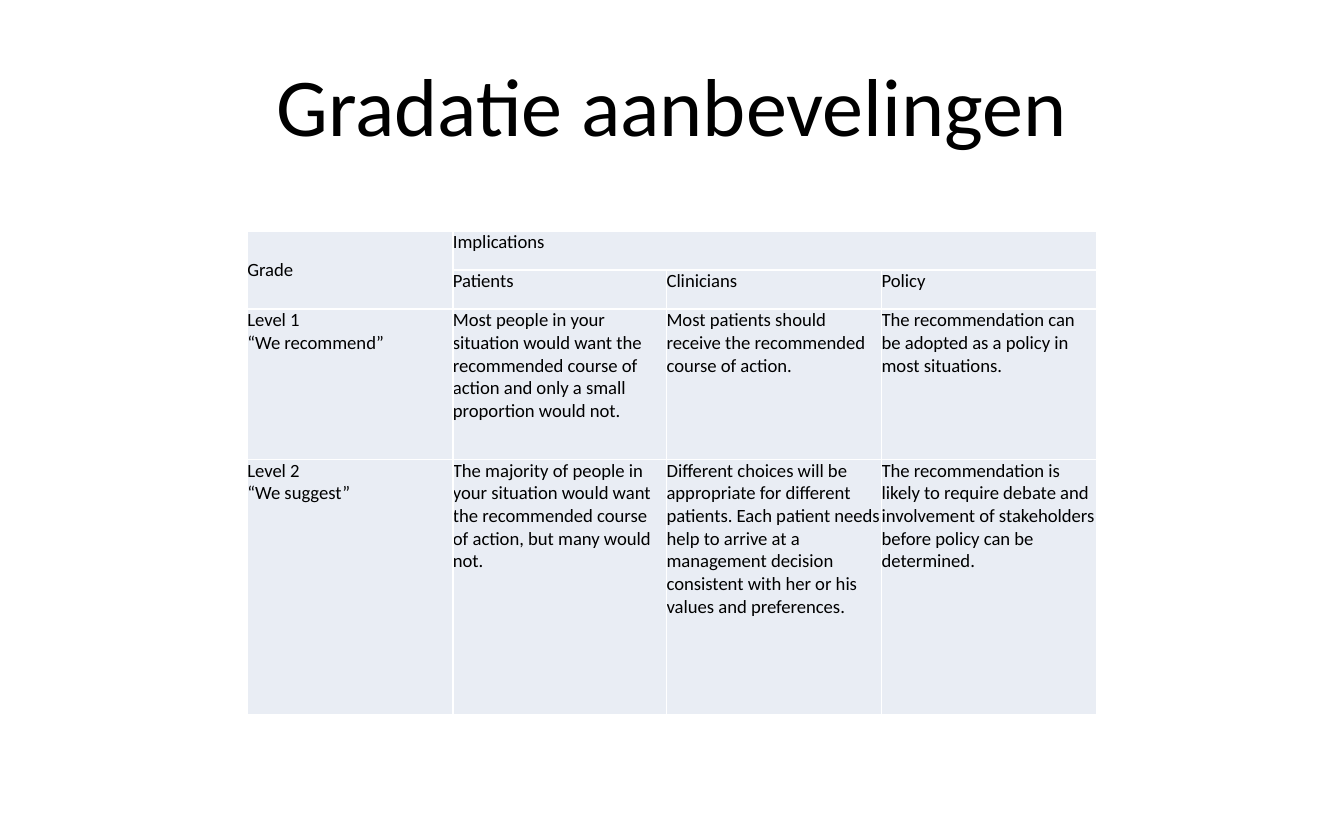
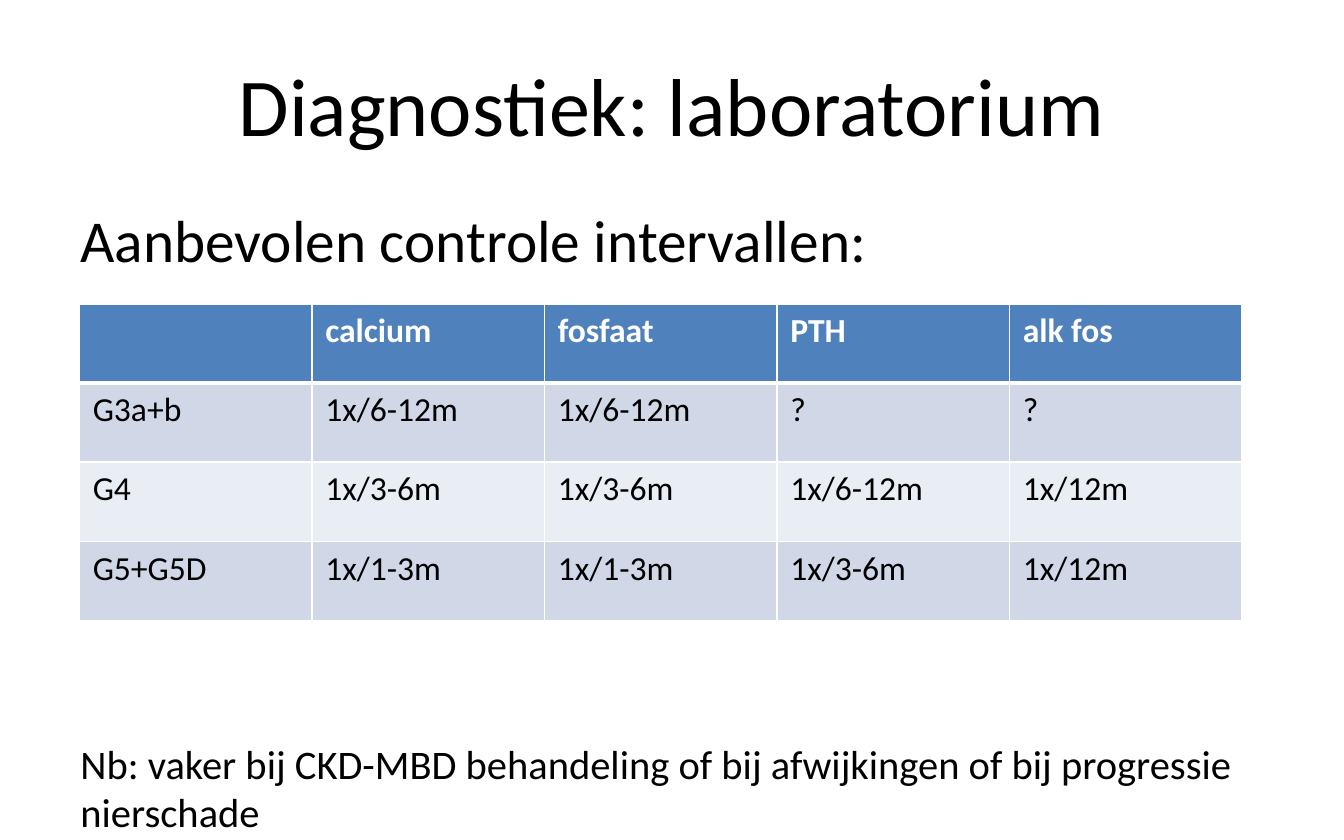
"""Build two slides on recommendation grades and laboratory check intervals."""
from dataclasses import dataclass
from typing import Any, Optional

import pptx
import pptx.dml.color
import pptx.enum.text
import pptx.oxml.ns
import pptx.util
from lxml import etree

Inches = pptx.util.Inches
Pt = pptx.util.Pt
RGBColor = pptx.dml.color.RGBColor
Anchor = pptx.enum.text.MSO_ANCHOR
qn = pptx.oxml.ns.qn

FONT = "Calibri"
BLACK = RGBColor(0x00, 0x00, 0x00)
WHITE = RGBColor(0xFF, 0xFF, 0xFF)
BLUE = RGBColor(0x4F, 0x81, 0xBD)
BAND = RGBColor(0xD0, 0xD8, 0xE8)
PALE = RGBColor(0xE9, 0xED, 0xF4)


@dataclass(frozen=True)
class Grid:
    """Content and style of one table."""

    left: float
    top: float
    columns: list[float]
    heights: list[float]
    rows: list[list[str]]
    fills: list[RGBColor]
    size: float
    header: bool = False
    margin: Optional[float] = None


GRADES = Grid(
    left=1.84, top=1.72, columns=[1.53, 1.59, 1.6, 1.6],
    heights=[0.29, 0.29, 1.12, 1.9], fills=[PALE] * 4, size=10, margin=0,
    rows=[
        ["Grade", "Implications", "", ""],
        ["", "Patients", "Clinicians", "Policy"],
        ["Level 1\n“We recommend”",
         "Most people in your situation would want the recommended course of "
         "action and only a small proportion would not.",
         "Most patients should receive the recommended course of action.",
         "The recommendation can be adopted as a policy in most situations."],
        ["Level 2\n“We suggest”",
         "The majority of people in your situation would want the recommended "
         "course of action, but many would not.",
         "Different choices will be appropriate for different patients. Each "
         "patient needs help to arrive at a management decision consistent "
         "with her or his values and preferences.",
         "The recommendation is likely to require debate and involvement of "
         "stakeholders before policy can be determined."],
    ],
)

INTERVALS = Grid(
    left=0.59, top=2.26, columns=[1.73] * 5, heights=[0.59] * 4,
    fills=[BLUE, BAND, PALE, BAND], size=18, header=True,
    rows=[
        ["", "calcium", "fosfaat", "PTH", "alk fos"],
        ["G3a+b", "1x/6-12m", "1x/6-12m", "?", "?"],
        ["G4", "1x/3-6m", "1x/3-6m", "1x/6-12m", "1x/12m"],
        ["G5+G5D", "1x/1-3m", "1x/1-3m", "1x/3-6m", "1x/12m"],
    ],
)


def format_text(tf: Any, size: float, color: RGBColor = BLACK, bold: bool = False) -> None:
    """Give every run in a text frame the same font."""
    for p in tf.paragraphs:
        for r in p.runs:
            r.font.name = FONT
            r.font.size = Pt(size)
            r.font.bold = bold
            r.font.color.rgb = color


def add_border(cell: Any, side: str, width: float) -> None:
    """Draw a white border on one side of a cell."""
    ln = etree.SubElement(cell._tc.get_or_add_tcPr(), qn(f"a:ln{side}"), w=str(Pt(width)))
    fill = etree.SubElement(ln, qn("a:solidFill"))
    etree.SubElement(fill, qn("a:srgbClr"), val=str(WHITE))


def add_grid(slide: Any, grid: Grid) -> Any:
    """Add a table and return it."""
    table = slide.shapes.add_table(
        len(grid.heights), len(grid.columns), Inches(grid.left), Inches(grid.top),
        Inches(sum(grid.columns)), Inches(sum(grid.heights))).table
    table.first_row = grid.header
    table.horz_banding = False
    for column, width in zip(table.columns, grid.columns):
        column.width = Inches(width)
    for i, (row, height) in enumerate(zip(table.rows, grid.heights)):
        row.height = Inches(height)
        is_header = grid.header and i == 0
        for cell, text in zip(row.cells, grid.rows[i]):
            for side in "LRTB":
                thick = grid.header and (i, side) in ((0, "B"), (1, "T"))
                add_border(cell, side, 3 if thick else 1)
            cell.fill.solid()
            cell.fill.fore_color.rgb = grid.fills[i]
            if grid.margin is not None:
                cell.margin_left = cell.margin_right = Inches(grid.margin)
                cell.margin_top = cell.margin_bottom = Inches(grid.margin)
            cell.text_frame.text = text
            format_text(cell.text_frame, grid.size, WHITE if is_header else BLACK, is_header)
    return table


def add_titled_slide(prs: Any, title: str) -> Any:
    """Add a title-only slide with a centred title."""
    slide = prs.slides.add_slide(prs.slide_layouts[5])
    sp = slide.shapes.title
    sp.left, sp.top, sp.width, sp.height = Inches(0.5), Inches(0.25), Inches(9), Inches(1.04)
    tf = sp.text_frame
    tf.text = title
    tf.vertical_anchor = Anchor.MIDDLE
    tf.paragraphs[0].alignment = pptx.enum.text.PP_ALIGN.CENTER
    format_text(tf, 44)
    return slide


def add_grades_slide(prs: Any) -> None:
    """Add the slide with the grades of recommendation."""
    table = add_grid(add_titled_slide(prs, "Gradatie aanbevelingen"), GRADES)
    table.cell(0, 0).merge(table.cell(1, 0))
    table.cell(0, 0).vertical_anchor = Anchor.MIDDLE
    table.cell(0, 1).merge(table.cell(0, 3))


def add_intervals_slide(prs: Any) -> None:
    """Add the slide with the laboratory check intervals."""
    slide = add_titled_slide(prs, "Diagnostiek: laboratorium")
    tf = slide.shapes.add_textbox(Inches(0.5), Inches(1.46), Inches(9), Inches(4.12)).text_frame
    tf.word_wrap = True
    tf.text = ("Aanbevolen controle intervallen:\n"
               "Nb: vaker bij CKD-MBD behandeling of bij afwijkingen of bij "
               "progressie nierschade")
    format_text(tf, 21.7)
    intro, note = tf.paragraphs
    intro.runs[0].font.size = Pt(31.8)
    note.space_before = Pt(249)
    add_grid(slide, INTERVALS)


def main() -> None:
    """Build and save the presentation."""
    prs = pptx.Presentation()
    prs.slide_width, prs.slide_height = Inches(10), Inches(6.25)
    add_grades_slide(prs)
    add_intervals_slide(prs)
    prs.save("out.pptx")


if __name__ == "__main__":
    main()
